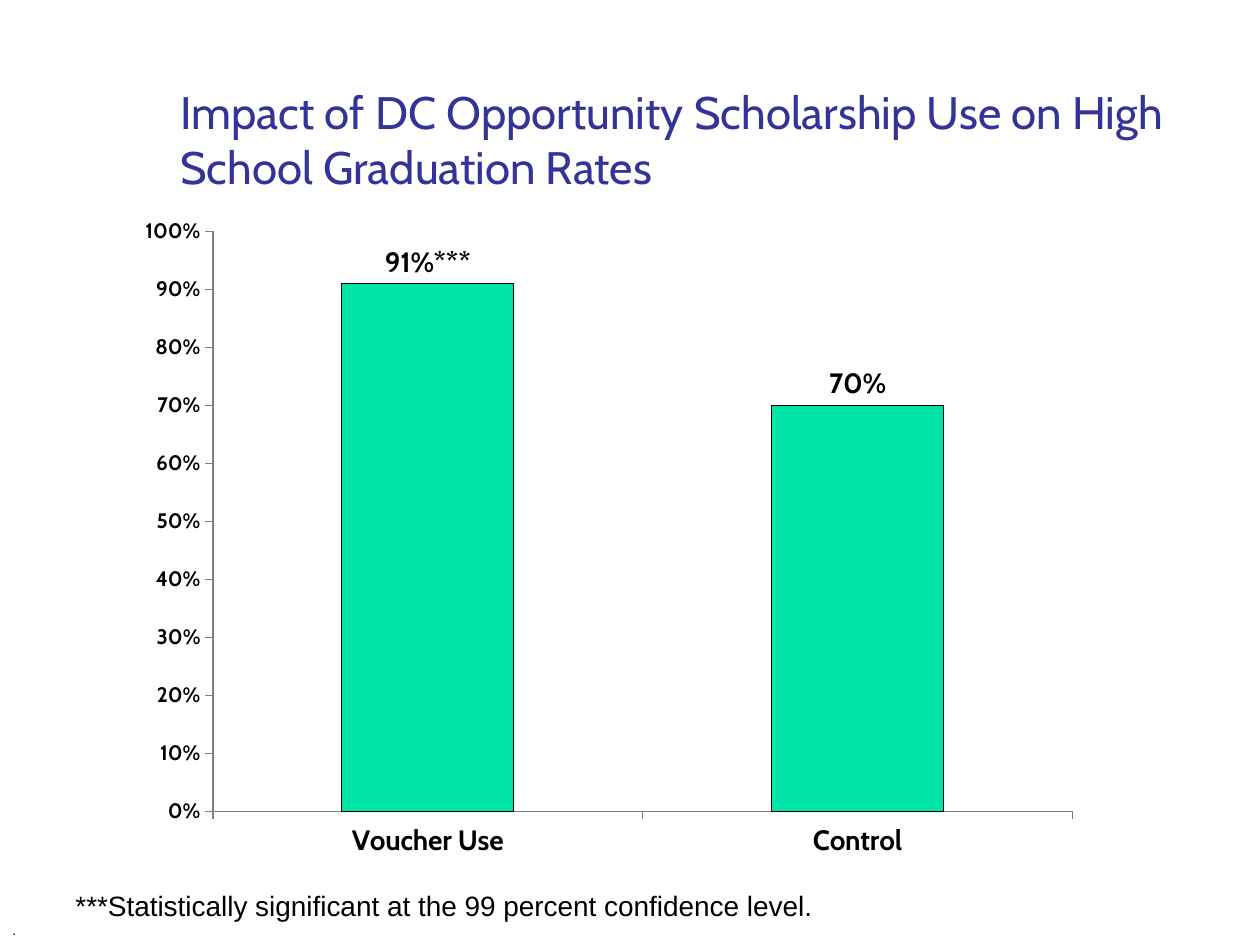
"""Build a slide with a column chart of graduation rates by scholarship use."""
from lxml import etree
from pptx import Presentation
from pptx.chart.data import CategoryChartData
from pptx.dml.color import RGBColor
from pptx.enum.chart import XL_CHART_TYPE, XL_LABEL_POSITION, XL_TICK_MARK
from pptx.enum.text import MSO_ANCHOR
from pptx.util import Pt

COLUMN = XL_CHART_TYPE.COLUMN_CLUSTERED
OUTSIDE_END = XL_LABEL_POSITION.OUTSIDE_END
TICK_OUTSIDE = XL_TICK_MARK.OUTSIDE
BOTTOM, TOP = MSO_ANCHOR.BOTTOM, MSO_ANCHOR.TOP
CHART_NAMESPACE = "http://schemas.openxmlformats.org/drawingml/2006/chart"
PLOT_LAYOUT = {"layoutTarget": "inner", "xMode": "edge", "yMode": "edge",
               "x": "0.09", "y": "0.04", "w": "0.89", "h": "0.87"}


def color(value):
    return RGBColor.from_string(value)


def style_font(font, name, size, bold=False, fill="000000"):
    for attribute, value in {"name": name, "size": Pt(size), "bold": bold}.items():
        setattr(font, attribute, value)
    font.color.rgb = color(fill)


deck = Presentation()
deck.slide_width, deck.slide_height = Pt(720), Pt(540)
page = deck.slides.add_slide(deck.slide_layouts[6])

text_boxes = [
    ((96, 24, 594, 90), BOTTOM, "Cabin", "333399",
     [("Impact of DC Opportunity Scholarship Use on High School Graduation Rates", 26)]),
    ((0, 504, 591, 27), TOP, "Arial", "000000",
     [("\t***Statistically significant at the 99 percent confidence level.", 16), (".", 8)]),
]
for bounds, anchor, name, fill, lines in text_boxes:
    frame = page.shapes.add_textbox(*map(Pt, bounds)).text_frame
    frame.word_wrap = True
    frame.vertical_anchor = anchor
    for index, (text, size) in enumerate(lines):
        para = frame.add_paragraph() if index else frame.paragraphs[0]
        span = para.add_run()
        span.text = text
        style_font(span.font, name, size, fill=fill)

rates = CategoryChartData(number_format="0%")
rates.categories = ["Voucher Use", "Control"]
rates.add_series("Series 1", [0.91, 0.7])
chart = page.shapes.add_chart(COLUMN, Pt(72), Pt(117), Pt(552), Pt(381), rates).chart
chart.has_legend = False
chart.has_title = False
style_font(chart.font, "Cabin", 10)

for axis, size in [(chart.category_axis, 16), (chart.value_axis, 12)]:
    axis.has_major_gridlines = False
    axis.major_tick_mark = TICK_OUTSIDE
    axis.format.line.color.rgb = color("808080")
    axis.format.line.width = Pt(0.75)
    style_font(axis.tick_labels.font, "Cabin", size, bold=True)
scale = {"minimum_scale": 0, "maximum_scale": 1, "major_unit": 0.1}
for attribute, value in scale.items():
    setattr(chart.value_axis, attribute, value)
chart.value_axis.tick_labels.number_format = "0%"
chart.value_axis.tick_labels.number_format_is_linked = False

plot = chart.plots[0]
plot.gap_width = 150
plot.vary_by_categories = False
columns = plot.series[0]
columns.format.fill.solid()
columns.format.fill.fore_color.rgb = color("00E4A8")
columns.format.line.color.rgb = color("000000")
columns.format.line.width = Pt(0.75)

labels = columns.data_labels
label_format = {"show_value": True, "position": OUTSIDE_END,
                "number_format": "0%", "number_format_is_linked": False}
for attribute, value in label_format.items():
    setattr(labels, attribute, value)
style_font(labels.font, "Cabin", 16, bold=True)

voucher_label = columns.points[0].data_label
span = voucher_label.text_frame.paragraphs[0].add_run()
span.text = "91%***"
style_font(span.font, "Cabin", 16, bold=True)
voucher_label.position = OUTSIDE_END

plot_area = chart.element.find(f".//{{{CHART_NAMESPACE}}}plotArea")
for old_layout in plot_area.findall(f"{{{CHART_NAMESPACE}}}layout"):
    plot_area.remove(old_layout)
layout = etree.Element(f"{{{CHART_NAMESPACE}}}layout")
manual = etree.SubElement(layout, f"{{{CHART_NAMESPACE}}}manualLayout")
for tag, value in PLOT_LAYOUT.items():
    etree.SubElement(manual, f"{{{CHART_NAMESPACE}}}{tag}", val=value)
plot_area.insert(0, layout)

deck.save("out.pptx")
